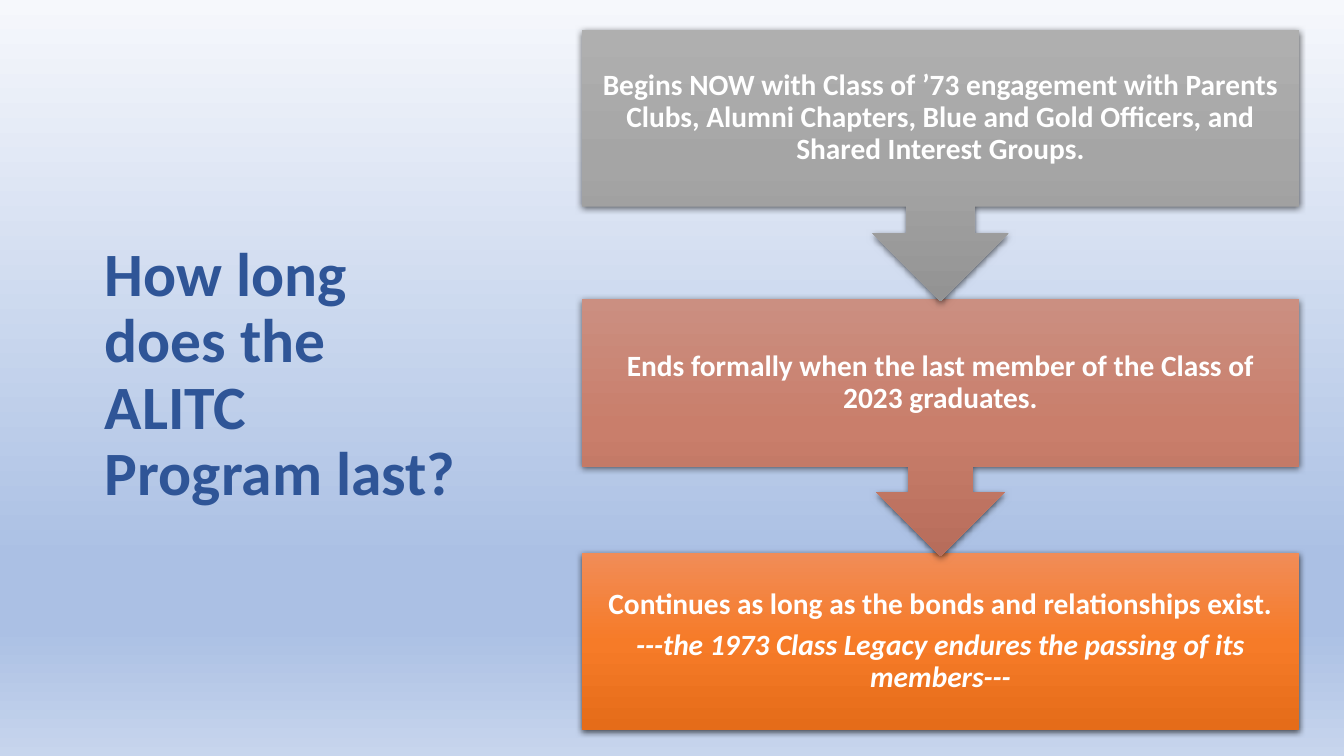
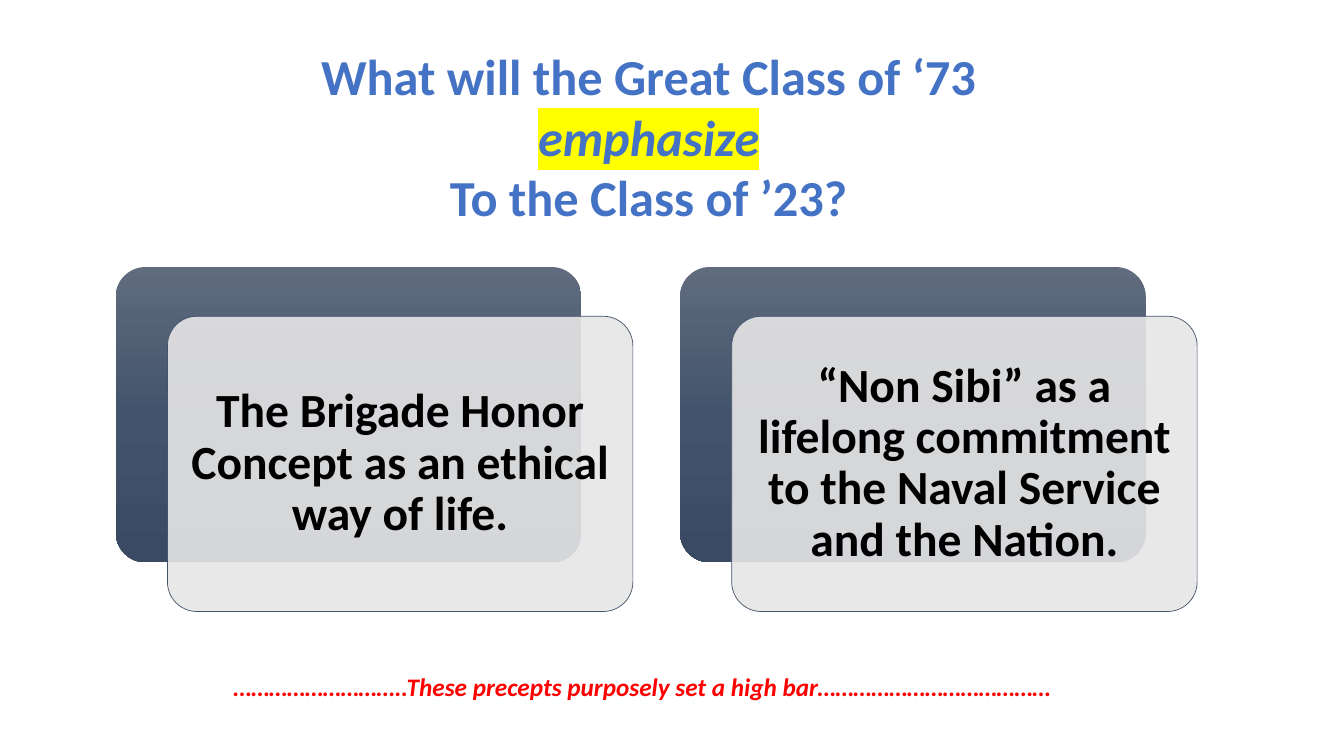
"""Build two slides: a program timeline and the precepts the class emphasizes."""
from dataclasses import dataclass
from lxml.etree import SubElement
from pptx import Presentation
from pptx.dml.color import RGBColor
from pptx.enum.shapes import MSO_SHAPE
from pptx.enum.text import MSO_ANCHOR, MSO_AUTO_SIZE, PP_ALIGN
from pptx.oxml.ns import qn
from pptx.util import Cm, Pt


@dataclass(frozen=True)
class Theme:
    font: str = "Calibri"
    navy: str = "2F5597"
    blue: str = "4472C4"
    red: str = "FF0000"
    white: str = "FFFFFF"
    black: str = "000000"
    highlight: str = "FFFF00"
    card: str = "E7E6E6"
    card_line: str = "44546A"
    sky: tuple = ((0, "F6F8FC"), (74, "ABC0E4"), (83, "ABC0E4"), (100, "C7D5ED"))
    gray: tuple = ((0, "AFAFAF"), (50, "A5A5A5"), (100, "939393"))
    rose: tuple = ((0, "CB8F81"), (50, "C97E6B"), (100, "B76D5B"))
    orange: tuple = ((0, "F18C57"), (50, "F67B28"), (100, "E56C19"))
    slate: tuple = ((0, "606B7D"), (50, "42546C"), (100, "394A62"))
    side_title: int = 44
    top_title: int = 36
    card_text: int = 34
    step_text: int = 21
    note: int = 18


T = Theme()


def set_gradient(fill, element, stops):
    fill.gradient()
    fill.gradient_angle = 270
    gs_list = element.find(".//" + qn("a:gsLst"))
    for gs in list(gs_list):
        gs_list.remove(gs)
    for pos, color in stops:
        gs = SubElement(gs_list, qn("a:gs"), pos=str(pos * 1000))
        SubElement(gs, qn("a:srgbClr"), val=color)


def set_text(sp, text, size, color, align=PP_ALIGN.CENTER, anchor=MSO_ANCHOR.MIDDLE,
             spacing=0.9, inset=None, gap=0):
    tf = sp.text_frame
    tf.text = text
    tf.word_wrap = True
    tf.auto_size = MSO_AUTO_SIZE.NONE
    tf.vertical_anchor = anchor
    if inset is not None:
        tf.margin_left = tf.margin_right = tf.margin_top = tf.margin_bottom = inset
    for i, p in enumerate(tf.paragraphs):
        p.alignment = align
        p.line_spacing = spacing
        p.space_before = Pt(gap if i else 0)
        for r in p.runs:
            r.font.name = T.font
            r.font.size = Pt(size)
            r.font.bold = True
            r.font.color.rgb = RGBColor.from_string(color)
    return tf


prs = Presentation()
prs.slide_width, prs.slide_height = Cm(33.87), Cm(19.05)
title_only = prs.slide_layouts[5]

s = prs.slides.add_slide(title_only)
set_gradient(s.background.fill, s.element, T.sky)
title = s.shapes.title
title.left, title.top, title.width, title.height = Cm(2.39), Cm(2.82), Cm(9.5), Cm(13.31)
set_text(title, "How long does the ALITC Program last?", T.side_title, T.navy, PP_ALIGN.LEFT)

steps = [
    (MSO_SHAPE.RECTANGLE, 13.94, 4.45, T.orange,
     "Continues as long as the bonds and relationships exist.\n"
     "---the 1973 Class Legacy endures the passing of its members---"),
    (MSO_SHAPE.DOWN_ARROW_CALLOUT, 7.54, 6.48, T.rose,
     "Ends formally when the last member of the Class of 2023 graduates."),
    (MSO_SHAPE.DOWN_ARROW_CALLOUT, 0.76, 6.83, T.gray,
     "Begins NOW with Class of ’73 engagement with Parents Clubs, Alumni Chapters, "
     "Blue and Gold Officers, and Shared Interest Groups."),
]
for kind, top, height, stops, text in steps:
    sp = s.shapes.add_shape(kind, Cm(14.66), Cm(top), Cm(18.08), Cm(height))
    set_gradient(sp.fill, sp.element, stops)
    sp.line.fill.background()
    sp.shadow.inherit = False
    effects = sp.element.spPr.find(qn("a:effectLst"))
    shadow = SubElement(effects, qn("a:outerShdw"), blurRad=str(Pt(4.5)),
                        dist=str(Pt(1.5)), dir="5400000", rotWithShape="0")
    shade = SubElement(shadow, qn("a:srgbClr"), val=T.black)
    SubElement(shade, qn("a:alpha"), val="63000")
    tf = set_text(sp, text, T.step_text, T.white, inset=Cm(0.41), gap=7)
    for p in tf.paragraphs[1:]:
        p.runs[0].font.italic = True

s = prs.slides.add_slide(title_only)
title = s.shapes.title
title.left, title.top, title.width, title.height = Cm(2.29), Cm(1.02), Cm(28.12), Cm(4.88)
tf = set_text(title, "What will the Great Class of ‘73\nemphasize\nTo the Class of ’23?",
              T.top_title, T.blue, anchor=MSO_ANCHOR.TOP, spacing=1.0)
r = tf.paragraphs[1].runs[0]
r.font.italic = True
rPr = r.font.fill and r._r.get_or_add_rPr()
mark = SubElement(rPr, qn("a:highlight"))
SubElement(mark, qn("a:srgbClr"), val=T.highlight)
rPr.find(qn("a:solidFill")).addnext(mark)

precepts = ["The Brigade Honor Concept as an ethical way of life.",
            "“Non Sibi” as a lifelong commitment to the Naval Service and the Nation."]
for i, text in enumerate(precepts):
    left, top = 2.92 + i * 14.22, 6.73
    back, card = [s.shapes.add_shape(MSO_SHAPE.ROUNDED_RECTANGLE, Cm(left + dx), Cm(top + dy),
                                     Cm(11.73), Cm(7.44))
                  for dx, dy in ((0, 0), (1.3, 1.24))]
    for sp in (back, card):
        sp.adjustments[0] = 0.1
        sp.shadow.inherit = False
    set_gradient(back.fill, back.element, T.slate)
    back.line.fill.background()
    card.fill.solid()
    card.fill.fore_color.rgb = RGBColor.from_string(T.card)
    tint = card.element.spPr.find(qn("a:solidFill")).find(qn("a:srgbClr"))
    SubElement(tint, qn("a:alpha"), val="90000")
    card.line.color.rgb = RGBColor.from_string(T.card_line)
    card.line.width = Pt(0.5)
    set_text(card, text, T.card_text, T.black, inset=Cm(0.36))

note = s.shapes.add_textbox(Cm(5.64), Cm(16.79), Cm(23.11), Cm(1.02))
tf = set_text(note, "………………………..These precepts purposely set a high bar…………………………………",
              T.note, T.red, PP_ALIGN.LEFT, MSO_ANCHOR.TOP, 1.0)
tf.paragraphs[0].runs[0].font.italic = True

prs.save("out.pptx")
